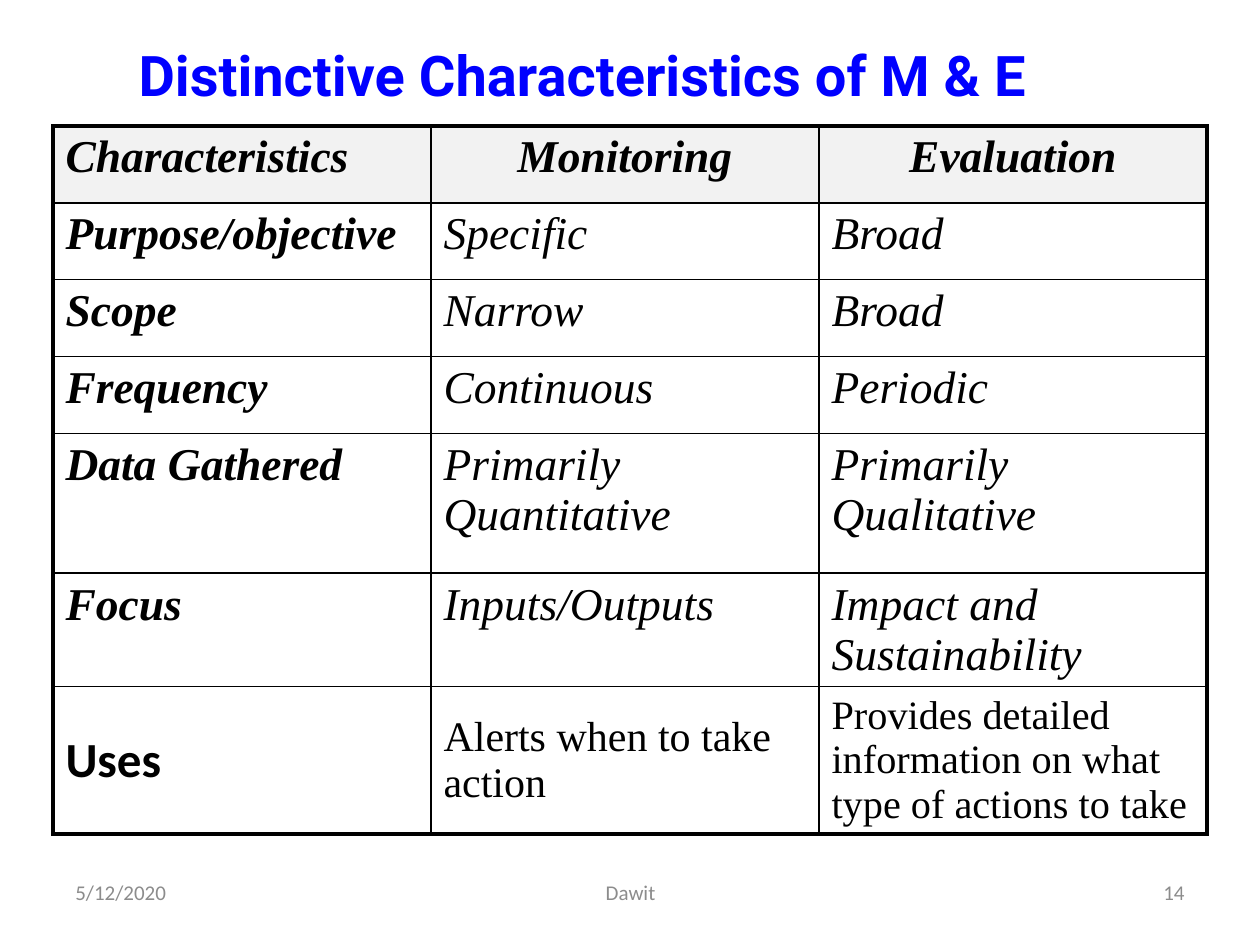
from dataclasses import dataclass

import pptx
import pptx.oxml
import pptx.util
from pptx.dml.color import RGBColor
from pptx.enum.text import MSO_ANCHOR, PP_ALIGN
from pptx.oxml.ns import nsdecls
from pptx.util import Inches, Pt


@dataclass(frozen=True)
class Theme:
    title: str = "0000FF"
    ink: str = "000000"
    muted: str = "8C8C8C"
    header: str = "F2F2F2"
    title_font: str = "Roboto"
    serif: str = "Times New Roman"
    sans: str = "Calibri"
    title_size: int = 32
    label_size: int = 28
    body_size: int = 26
    use_size: int = 24
    small_use_size: int = 23
    footer_size: int = 12
    outer: float = 2.25
    inner: float = 1


T = Theme()

ROWS = [
    ("Characteristics", "Monitoring", "Evaluation"),
    ("Purpose/objective", "Specific", "Broad"),
    ("Scope", "Narrow", "Broad"),
    ("Frequency", "Continuous", "Periodic"),
    ("Data Gathered", "Primarily Quantitative", "Primarily Qualitative"),
    ("Focus", "Inputs/Outputs", "Impact and Sustainability"),
    ("Uses", "Alerts when to take action",
     "Provides detailed information on what type of actions to take"),
]
COL_WIDTHS = [3, 3.08, 3.08]
ROW_HEIGHTS = [0.61] * 4 + [1.11, 0.9, 1.17]
LAST_ROW_SIZES = [T.label_size, T.use_size, T.small_use_size]


def write(tf, text, size, font, color, bold=False, italic=False,
          align=PP_ALIGN.LEFT):
    p = tf.paragraphs[0]
    p.alignment = align
    r = p.add_run()
    r.text = text
    f = r.font
    f.size, f.name, f.bold, f.italic = Pt(size), font, bold, italic
    f.color.rgb = RGBColor.from_string(color)


def add_title(s, text):
    sp = s.shapes.title
    sp.left, sp.top = Inches(0), Inches(0.25)
    sp.width, sp.height = Inches(9.25), Inches(0.67)
    sp.text_frame.vertical_anchor = MSO_ANCHOR.MIDDLE
    write(sp.text_frame, text, T.title_size, T.title_font, T.title,
          bold=True, align=PP_ALIGN.CENTER)


def set_borders(cell, widths):
    """Draw the four edges; widths are in points, keyed by side."""
    tcPr = cell._tc.get_or_add_tcPr()
    for i, side in enumerate("LRTB"):
        tcPr.insert(i, pptx.oxml.parse_xml(
            f'<a:ln{side} {nsdecls("a")} w="{Pt(widths[side])}">'
            f'<a:solidFill><a:srgbClr val="{T.ink}"/></a:solidFill>'
            f'</a:ln{side}>'))


def fill_cell(cell, text, row, col):
    header, last = row == 0, row == len(ROWS) - 1
    if header:
        cell.fill.solid()
        cell.fill.fore_color.rgb = RGBColor.from_string(T.header)
    else:
        cell.fill.background()
    # Heavy lines only on the outside of the table
    edges = {"L": col == 0, "R": col == len(COL_WIDTHS) - 1,
             "T": header, "B": last}
    set_borders(cell, {side: T.outer if outside else T.inner
                       for side, outside in edges.items()})
    cell.vertical_anchor = MSO_ANCHOR.MIDDLE if last else MSO_ANCHOR.TOP
    write(cell.text_frame, text,
          size=LAST_ROW_SIZES[col] if last else T.body_size,
          font=T.sans if last and col == 0 else T.serif,
          color=T.ink, bold=header or col == 0, italic=not last,
          align=PP_ALIGN.CENTER if header and col else PP_ALIGN.LEFT)


def add_comparison(s):
    frame = s.shapes.add_table(
        len(ROWS), len(COL_WIDTHS), Inches(0.42), Inches(1),
        Inches(sum(COL_WIDTHS)), Inches(sum(ROW_HEIGHTS)))
    table = frame.table
    table.first_row = table.horz_banding = False
    for column, width in zip(table.columns, COL_WIDTHS):
        column.width = Inches(width)
    for row, height in zip(table.rows, ROW_HEIGHTS):
        row.height = Inches(height)
    for i, texts in enumerate(ROWS):
        for j, text in enumerate(texts):
            fill_cell(table.cell(i, j), text, i, j)


def add_footer(s, text, left, width, align):
    sp = s.shapes.add_textbox(Inches(left), Inches(6.83),
                              Inches(width), Inches(0.5))
    tf = sp.text_frame
    tf.word_wrap = True
    tf.vertical_anchor = MSO_ANCHOR.MIDDLE
    write(tf, text, T.footer_size, T.sans, T.muted, align=align)


def main():
    prs = pptx.Presentation()
    prs.slide_width, prs.slide_height = Inches(10), Inches(7.5)
    s = prs.slides.add_slide(prs.slide_layouts[5])

    # Title and comparison table
    add_title(s, "Distinctive Characteristics of M & E")
    add_comparison(s)

    # Footer: date, author, slide number
    add_footer(s, "5/12/2020", 0.5, 2.33, PP_ALIGN.LEFT)
    add_footer(s, "Dawit", 3.42, 3.17, PP_ALIGN.CENTER)
    add_footer(s, "14", 7.17, 2.33, PP_ALIGN.RIGHT)

    prs.save("out.pptx")


if __name__ == "__main__":
    main()
